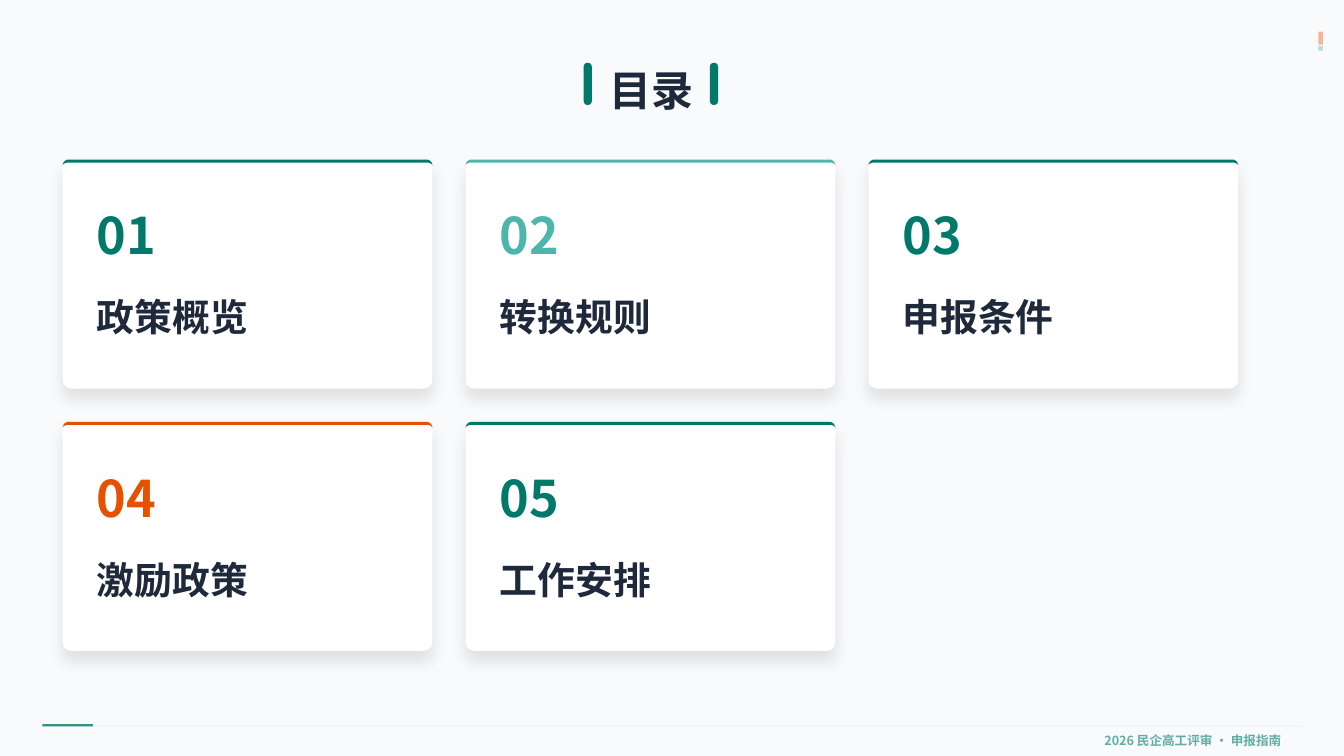
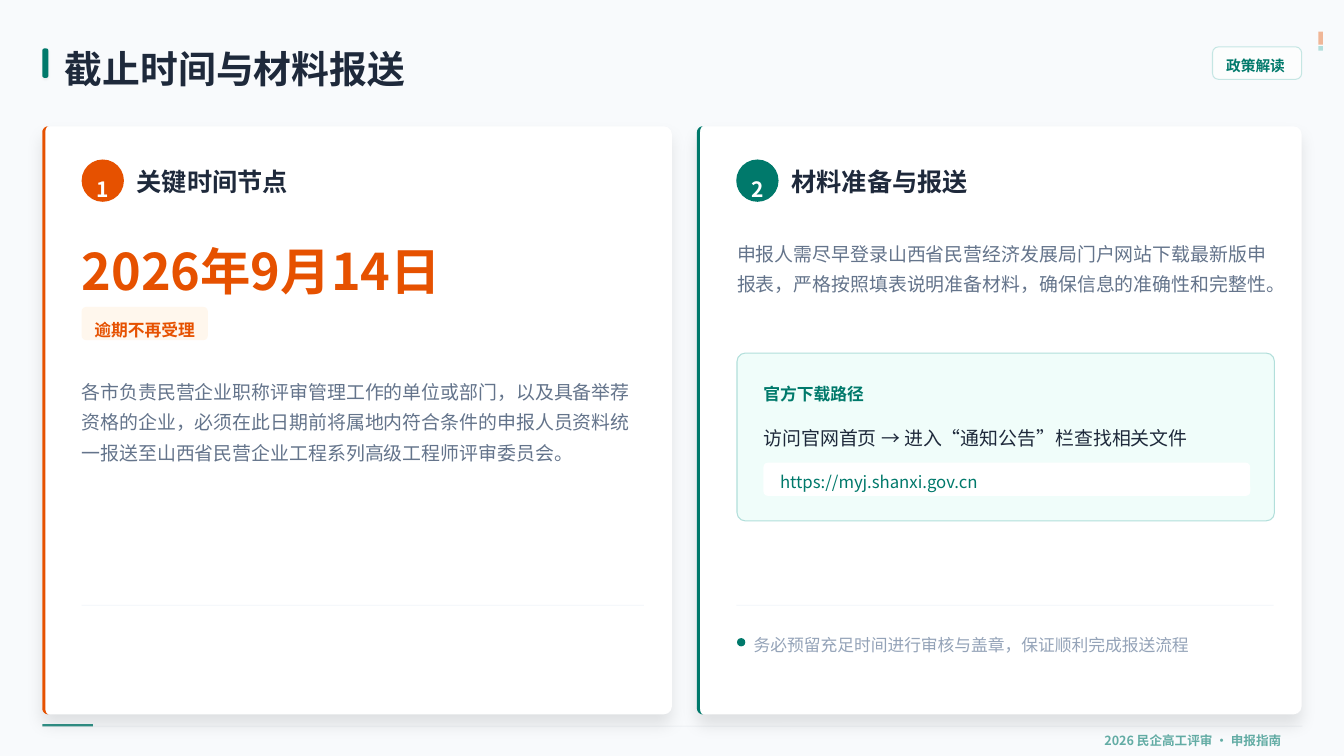
from math import cos, pi, sin

from lxml.etree import SubElement
from pptx import Presentation
from pptx.dml.color import RGBColor
from pptx.enum.shapes import MSO_SHAPE as Shape
from pptx.enum.text import MSO_ANCHOR as Anchor, MSO_AUTO_SIZE as AutoSize, PP_ALIGN as Align
from pptx.oxml.ns import qn
from pptx.util import Inches, Pt

# Shared style
FONT = "Noto Sans CJK SC"
TEAL = RGBColor(0x00, 0x79, 0x6B)
LIGHT_TEAL = RGBColor(0x4D, 0xB6, 0xAC)
PALE_TEAL = RGBColor(0xB2, 0xDF, 0xDB)
MINT = RGBColor(0xF0, 0xFD, 0xFA)
ORANGE = RGBColor(0xE6, 0x51, 0x00)
CREAM = RGBColor(0xFF, 0xF7, 0xED)
INK = RGBColor(0x1E, 0x29, 0x3B)
SLATE = RGBColor(0x64, 0x74, 0x8B)
MIST = RGBColor(0x94, 0xA3, 0xB8)
RULE = RGBColor(0xF1, 0xF5, 0xF9)
PAPER = RGBColor(0xF8, 0xFA, 0xFC)
WHITE = RGBColor(0xFF, 0xFF, 0xFF)
WIDTH, HEIGHT = 17.78, 10
CARD_RADIUS = 0.11
ACCENT_RADIUS, ACCENT_WIDTH = 0.08, 0.04
CARD_SHADOW = (10, 15, 10)  # opacity in percent, blur and distance in points
BAR_SHADOW = (5, 2, 1)

# Content
FOOTER = "2026 民企高工评审 · 申报指南"
FOOTER_BARS = [  # bounds, colour, opacity in percent
    ((0.56, 9.6, 16.67, 0.01), SLATE, 15),
    ((0.56, 9.58, 0.67, 0.03), TEAL, 80),
    ((17.44, 0.42, 0.06, 0.17), ORANGE, 40),
    ((17.44, 0.61, 0.06, 0.06), LIGHT_TEAL, 40),
]

AGENDA_TITLE = "目录"
AGENDA = [
    ("政策概览", TEAL),
    ("转换规则", LIGHT_TEAL),
    ("申报条件", TEAL),
    ("激励政策", ORANGE),
    ("工作安排", TEAL),
]

DEADLINE_TITLE = "截止时间与材料报送"
TAG = "政策解读"
PANELS = [  # left, width, colour, heading
    (0.56, 8.33, ORANGE, "关键时间节点"),
    (9.22, 8, TEAL, "材料准备与报送"),
]
DATE = "2026年9月14日"
WARNING = "逾期不再受理"
DEADLINE_TEXT = (
    "各市负责民营企业职称评审管理工作的单位或部门，以及具备举荐资格的企业，"
    "必须在此日期前将属地内符合条件的申报人员资料统一报送至"
    "山西省民营企业工程系列高级工程师评审委员会。"
)
MATERIAL_TEXT = (
    "申报人需尽早登录山西省民营经济发展局门户网站下载最新版申报表，"
    "严格按照填表说明准备材料，确保信息的准确性和完整性。"
)
DOWNLOAD_HEADING = "官方下载路径"
DOWNLOAD_STEPS = "访问官网首页 → 进入“通知公告”栏查找相关文件"
DOWNLOAD_ADDRESS = "https://myj.shanxi.gov.cn"
REMINDER = "务必预留充足时间进行审核与盖章，保证顺利完成报送流程"


def set_opacity(parent, percent):
    color = parent.find(".//" + qn("a:srgbClr"))
    SubElement(color, qn("a:alpha"), val=str(percent * 1000))


def add_shadow(shape, opacity, blur, distance):
    effects = shape._element.spPr.find(qn("a:effectLst"))
    shadow = SubElement(effects, qn("a:outerShdw"), blurRad=str(Pt(blur)),
                        dist=str(Pt(distance)), dir="5400000",
                        algn="ctr", rotWithShape="0")
    SubElement(shadow, qn("a:srgbClr"), val="000000")
    set_opacity(shadow, opacity)


def paint(shape, color):
    shape.fill.solid()
    shape.fill.fore_color.rgb = color
    shape.line.fill.background()
    shape.shadow.inherit = False


def add_box(slide, bounds, color, radius=0, opacity=None, shadow=None):
    kind = Shape.ROUNDED_RECTANGLE if radius else Shape.RECTANGLE
    box = slide.shapes.add_shape(kind, *map(Inches, bounds))
    if radius:
        box.adjustments[0] = min(0.5, radius / min(bounds[2:]))
    paint(box, color)
    if opacity:
        set_opacity(box._element.spPr, opacity)
    if shadow:
        add_shadow(box, *shadow)
    return box


def outline(box, color):
    box.line.color.rgb = color
    box.line.width = Pt(1)


def write(shape, text, size, color, bold=False, spacing=1.25,
          align=Align.LEFT, anchor=Anchor.TOP, opacity=None):
    frame = shape.text_frame
    frame.margin_left = frame.margin_right = frame.margin_top = frame.margin_bottom = 0
    frame.word_wrap = True
    frame.auto_size = AutoSize.NONE
    frame.vertical_anchor = anchor
    frame.text = text
    paragraph = frame.paragraphs[0]
    paragraph.alignment = align
    paragraph.line_spacing = spacing
    font = paragraph.font
    font.size, font.bold, font.name = Pt(size), bold, FONT
    font.color.rgb = color
    SubElement(font._element, qn("a:ea"), typeface=FONT)
    if opacity:
        set_opacity(font._element, opacity)


def add_text(slide, bounds, text, size, color, **style):
    write(slide.shapes.add_textbox(*map(Inches, bounds)), text, size, color, **style)


def add_badge(slide, bounds, text, size, color, fill, radius):
    badge = add_box(slide, bounds, fill, radius)
    write(badge, text, size, color, bold=True, spacing=1.67,
          align=Align.CENTER, anchor=Anchor.MIDDLE)


def add_accent(slide, left, top, length, color, vertical=False):
    """Crescent-ended strip along the top or left edge of a card."""
    angles = [step * pi / 12 for step in range(7)]

    def edge(inset):
        depth = ACCENT_RADIUS - inset
        start = [(ACCENT_RADIUS * (1 - cos(a)), ACCENT_RADIUS - depth * sin(a)) for a in angles]
        return start + [(length - along, across) for along, across in reversed(start)]

    points = edge(0) + edge(ACCENT_WIDTH)[::-1]
    if vertical:
        points = [(across, along) for along, across in points]
    points = [(Inches(left + x), Inches(top + y)) for x, y in points]
    builder = slide.shapes.build_freeform(*points[0], scale=1.0)
    builder.add_line_segments(points[1:], close=True)
    paint(builder.convert_to_shape(), color)


def add_card(slide, bounds, color, vertical=False):
    left, top, width, height = bounds
    add_box(slide, bounds, WHITE, CARD_RADIUS, shadow=CARD_SHADOW)
    add_accent(slide, left, top, height if vertical else width, color, vertical)


def new_slide(presentation, title, bounds, size):
    slide = presentation.slides.add_slide(presentation.slide_layouts[5])
    slide.background.fill.solid()
    slide.background.fill.fore_color.rgb = PAPER
    holder = slide.shapes.title
    holder.left, holder.top, holder.width, holder.height = map(Inches, bounds)
    write(holder, title, size, INK, bold=True)
    for bar, color, opacity in FOOTER_BARS:
        add_box(slide, bar, color, opacity=opacity)
    add_text(slide, (14.61, 9.64, 2.88, 0.25), FOOTER, 12, TEAL, bold=True, opacity=60)
    return slide


def build_agenda(presentation):
    slide = new_slide(presentation, AGENDA_TITLE, (8.06, 0.69, 1.94, 0.83), 40)
    for left in (7.72, 9.39):
        add_box(slide, (left, 0.83, 0.11, 0.56), TEAL, radius=0.06)

    # Cards, three to a row
    card_width, card_height, gap = 4.89, 3.03, 0.44
    for index, (name, color) in enumerate(AGENDA):
        row, column = divmod(index, 3)
        left = 0.83 + column * (card_width + gap)
        top = 2.11 + row * (card_height + gap)
        add_card(slide, (left, top, card_width, card_height), color)
        add_text(slide, (left + 0.45, top + 0.73, 5, 0.67), f"{index + 1:02}", 48, color,
                 bold=True, spacing=0.83)
        add_text(slide, (left + 0.45, top + 1.73, 4.75, 0.62), name, 36, INK,
                 bold=True, spacing=1.08)


def build_deadline(presentation):
    slide = new_slide(presentation, DEADLINE_TITLE, (0.86, 0.46, 15.72, 0.75), 36)
    add_box(slide, (0.56, 0.64, 0.08, 0.39), TEAL, radius=0.03, shadow=BAR_SHADOW)

    # Tag at the right of the title
    tag = add_box(slide, (16.04, 0.62, 1.18, 0.43), WHITE, radius=0.08, opacity=60)
    outline(tag, LIGHT_TEAL)
    set_opacity(tag.line._get_or_add_ln(), 30)
    add_text(slide, (16.22, 0.69, 1.11, 0.29), TAG, 14, TEAL, bold=True)

    # Two panels with numbered headings and a rule near the bottom
    for number, (left, width, color, heading) in enumerate(PANELS, 1):
        inner = left + 0.52
        add_card(slide, (left, 1.67, width, 7.78), color, vertical=True)
        add_badge(slide, (inner, 2.11, 0.56, 0.56), str(number), 20, WHITE, color, radius=0.28)
        add_text(slide, (inner + 0.73, 2.17, width - 1.11, 0.44), heading, 24, INK,
                 bold=True, spacing=1.08)
        add_box(slide, (inner, 8, width - 0.89, 0.01), RULE)

    # Left panel: the date
    add_text(slide, (1.08, 3.11, 5.6, 0.83), DATE, 48, ORANGE, bold=True, spacing=1.08)
    add_badge(slide, (1.08, 4.06, 1.67, 0.44), WARNING, 16, ORANGE, CREAM, radius=0.06)
    add_text(slide, (1.08, 4.94, 7.44, 1.67), DEADLINE_TEXT, 18, SLATE, spacing=1.33)

    # Right panel: materials, download box and reminder
    add_text(slide, (9.75, 3.11, 7.11, 1.33), MATERIAL_TEXT, 18, SLATE, spacing=1.33)
    download = add_box(slide, (9.75, 4.67, 7.11, 2.22), MINT, radius=0.11)
    outline(download, PALE_TEAL)
    add_text(slide, (10.1, 5.01, 1.68, 0.33), DOWNLOAD_HEADING, 16, TEAL, bold=True)
    add_text(slide, (10.1, 5.57, 6, 0.38), DOWNLOAD_STEPS, 18, INK)
    add_box(slide, (10.1, 6.12, 6.44, 0.44), WHITE, radius=0.06)
    add_text(slide, (10.32, 6.18, 5.01, 0.33), DOWNLOAD_ADDRESS, 16, TEAL)
    add_box(slide, (9.75, 8.44, 0.11, 0.11), TEAL, radius=0.06)
    add_text(slide, (9.97, 8.33, 7.22, 0.33), REMINDER, 16, MIST)


def main():
    presentation = Presentation()
    presentation.slide_width, presentation.slide_height = Inches(WIDTH), Inches(HEIGHT)
    build_agenda(presentation)
    build_deadline(presentation)
    presentation.save("out.pptx")


if __name__ == "__main__":
    main()
